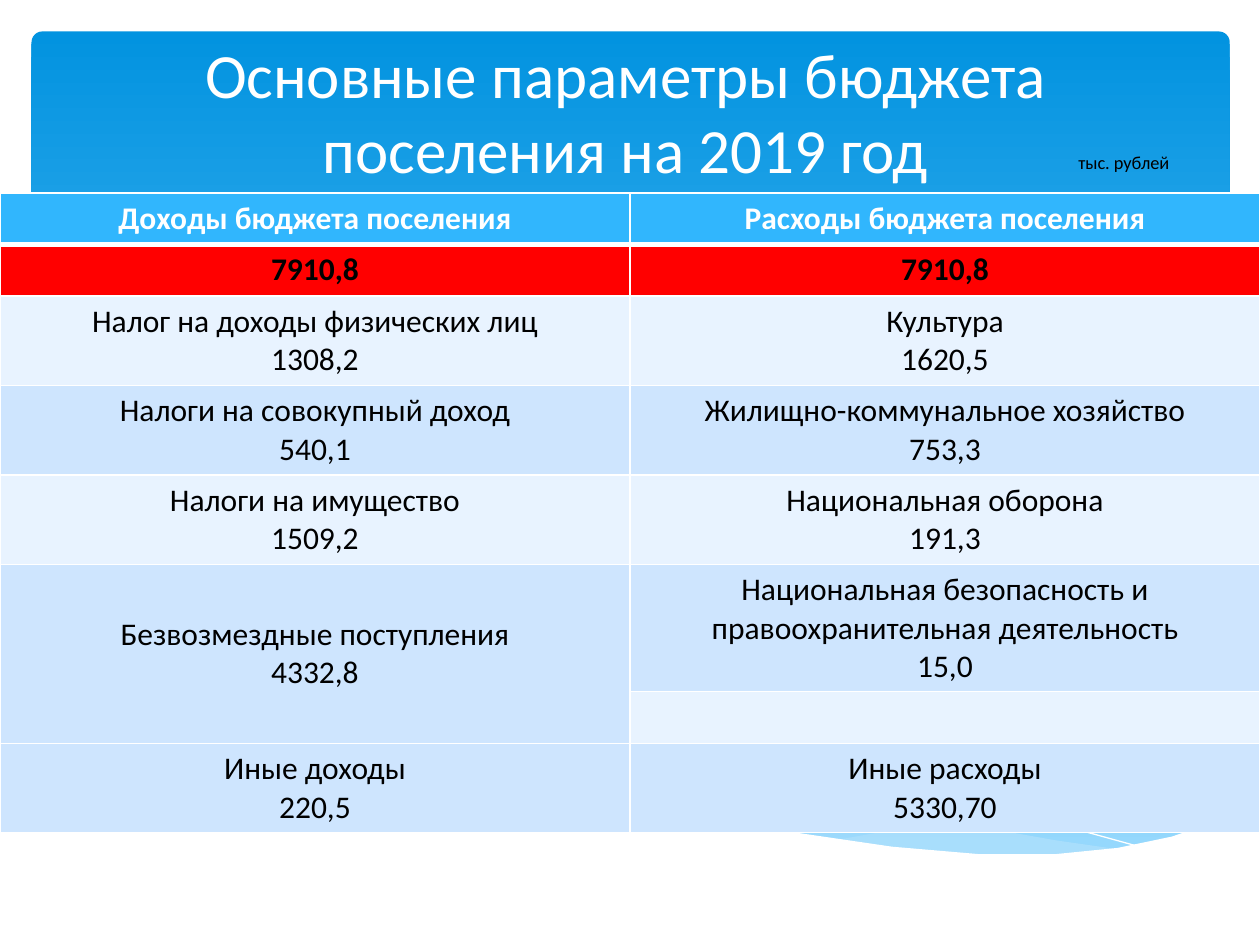
from dataclasses import dataclass

from lxml.etree import SubElement
from pptx import Presentation
from pptx.dml.color import RGBColor
from pptx.enum.shapes import MSO_SHAPE
from pptx.enum.text import MSO_ANCHOR, PP_ALIGN
from pptx.oxml.ns import qn
from pptx.util import Inches, Pt


@dataclass(frozen=True)
class Theme:
    font: str = "Calibri"
    title_size: float = 36
    table_size: float = 18
    unit_size: float = 10.5
    white: str = "FFFFFF"
    black: str = "000000"
    panel_top: str = "0293E0"
    panel_bottom: str = "83D3FE"
    wave: str = "C6E7FC"
    header: str = "31B6FD"
    total: str = "FF0000"
    band_light: str = "E8F3FF"
    band_dark: str = "CEE5FE"


THEME = Theme()

RIGHT_WAVE = [
    (9.53, 0.15), (8.99, 0.25), (8.39, 0.39), (7.57, 0.58), (6.84, 0.73), (6.39, 0.81),
    (6.83, 0.87), (7.35, 0.92), (7.92, 0.94), (8.41, 0.91), (8.84, 0.85), (9.21, 0.75),
    (9.54, 0.63),
]
LONG_WAVE = [
    (8.71, 0.89), (8.15, 0.81), (7.53, 0.7), (6.84, 0.56), (6.07, 0.38), (5.47, 0.24),
    (4.92, 0.14), (4.42, 0.07), (3.97, 0.03), (3.39, 0.01), (2.91, 0.04), (2.64, 0.07),
    (3.2, 0.15), (3.82, 0.27), (4.27, 0.38), (5.07, 0.56), (5.79, 0.71), (6.43, 0.82),
    (7, 0.9), (7.51, 0.93), (8.06, 0.94), (8.45, 0.92),
]
LONG_LINE = [
    (2.87, 0.11), (3.3, 0.05), (3.94, 0.03), (4.66, 0.06), (5.34, 0.12), (6.14, 0.24),
    (7.05, 0.42), (8.09, 0.66), (8.85, 0.87),
]
RIGHT_LINE = [
    (5.91, 0.73), (6.73, 0.51), (7.54, 0.32), (8.44, 0.14), (9.02, 0.06), (9.53, 0.01),
]
WHITE_BASE = [
    (9.54, 0.62), (9.07, 0.78), (8.64, 0.87), (8.14, 0.92), (7.55, 0.92), (6.85, 0.86),
    (6.03, 0.74), (5.06, 0.55), (4.24, 0.36), (3.42, 0.18), (2.69, 0.06), (2.07, 0.01),
    (1.54, 0), (0.96, 0.03), (0.44, 0.13), (0, 0.29), (0, 1.45), (9.54, 1.45),
]

# Row height, fill, income text, expense text
BUDGET_ROWS = [
    (0.41, THEME.header, "Доходы бюджета поселения", "Расходы бюджета поселения"),
    (0.41, THEME.total, "7910,8", "7910,8"),
    (0.71, THEME.band_light, "Налог на доходы физических лиц\n1308,2", "Культура\n1620,5"),
    (0.71, THEME.band_dark, "Налоги на совокупный доход\n540,1",
     "Жилищно-коммунальное хозяйство\n753,3"),
    (0.71, THEME.band_light, "Налоги на имущество\n1509,2", "Национальная оборона\n191,3"),
    (1.01, THEME.band_dark, "Безвозмездные поступления\n4332,8",
     "Национальная безопасность и правоохранительная деятельность\n15,0"),
    (0.41, THEME.band_light, "", ""),
    (0.71, THEME.band_dark, "Иные доходы\n220,5", "Иные расходы\n5330,70"),
]
GRANTS_ROW = 5


def write_text(frame, text, size, color=THEME.black, bold=False, align=PP_ALIGN.LEFT):
    """Write each line of the text as a formatted paragraph."""
    frame.text = text
    frame.word_wrap = True
    for paragraph in frame.paragraphs:
        paragraph.alignment = align
        font = paragraph.font
        for run in paragraph.runs:
            font = run.font
        font.name, font.size, font.bold = THEME.font, Pt(size), bold
        font.color.rgb = RGBColor.from_string(color)


def add_text(slide, box, text, anchor=MSO_ANCHOR.TOP, **text_format):
    frame = slide.shapes.add_textbox(*map(Inches, box)).text_frame
    write_text(frame, text, **text_format)
    frame.vertical_anchor = anchor


def add_curve(slide, box, points, fill=None, opacity=100):
    """Draw a filled outline, or an open white hairline when there is no fill."""
    left, top = box[:2]
    corners = [(Inches(left + x), Inches(top + y)) for x, y in points]
    builder = slide.shapes.build_freeform(*corners[0])
    builder.add_line_segments(corners[1:], close=fill is not None)
    shape = builder.convert_to_shape()
    shape.shadow.inherit = False
    if fill is None:
        shape.fill.background()
        shape.line.color.rgb = RGBColor.from_string(THEME.white)
        shape.line.width = Pt(0)
        return
    shape.line.fill.background()
    shape.fill.solid()
    shape.fill.fore_color.rgb = RGBColor.from_string(fill)
    if opacity < 100:
        color = shape.fill._xPr.find(qn("a:solidFill"))[0]
        SubElement(color, qn("a:alpha"), val=str(opacity * 1000))


def add_panel(slide, box):
    panel = slide.shapes.add_shape(MSO_SHAPE.ROUNDED_RECTANGLE, *map(Inches, box))
    panel.adjustments[0] = 0.013
    panel.shadow.inherit = False
    panel.line.fill.background()
    panel.fill.gradient()
    panel.fill.gradient_angle = 270
    colors = (THEME.panel_top, THEME.panel_bottom)
    for stop, color, position in zip(panel.fill.gradient_stops, colors, (0, 1)):
        stop.color.rgb = RGBColor.from_string(color)
        stop.position = position


def add_waves(slide, box):
    add_curve(slide, box, RIGHT_WAVE, THEME.wave, opacity=29)
    add_curve(slide, box, LONG_WAVE, THEME.wave, opacity=40)
    add_curve(slide, box, LONG_LINE)
    add_curve(slide, box, RIGHT_LINE)
    add_curve(slide, box, WHITE_BASE, THEME.white)


def set_borders(cell, top=1, bottom=1):
    properties = cell._tc.get_or_add_tcPr()
    widths = {"a:lnL": 1, "a:lnR": 1, "a:lnT": top, "a:lnB": bottom}
    for position, (tag, width) in enumerate(widths.items()):
        line = properties.makeelement(qn(tag), {"w": str(Pt(width))})
        properties.insert(position, line)
        SubElement(SubElement(line, qn("a:solidFill")), qn("a:srgbClr"), val=THEME.white)


def add_budget_table(slide, box):
    table = slide.shapes.add_table(len(BUDGET_ROWS), 2, *map(Inches, box)).table
    table.horz_banding = False
    for index, (height, fill, *texts) in enumerate(BUDGET_ROWS):
        table.rows[index].height = Inches(height)
        for column, text in enumerate(texts):
            cell = table.cell(index, column)
            cell.fill.solid()
            cell.fill.fore_color.rgb = RGBColor.from_string(fill)
            set_borders(cell, top=3 if index == 1 else 1, bottom=3 if index == 0 else 1)
            write_text(cell.text_frame, text, THEME.table_size, bold=index < 2,
                       color=THEME.white if index == 0 else THEME.black,
                       align=PP_ALIGN.CENTER)
    grants = table.cell(GRANTS_ROW, 0)
    grants.merge(table.cell(GRANTS_ROW + 1, 0))
    grants.vertical_anchor = MSO_ANCHOR.MIDDLE


def main():
    presentation = Presentation()
    presentation.slide_width, presentation.slide_height = Inches(10), Inches(7.5)
    slide = presentation.slides.add_slide(presentation.slide_layouts[6])
    add_panel(slide, (0.25, 0.25, 9.51, 6.6))
    add_waves(slide, (0.23, 5.86, 9.54, 1.45))
    add_text(slide, (0.67, 0.13, 8.59, 1.4), "Основные параметры бюджета поселения на 2019 год",
             anchor=MSO_ANCHOR.BOTTOM, size=THEME.title_size, color=THEME.white,
             align=PP_ALIGN.CENTER)
    add_budget_table(slide, (0, 1.53, 10, 5.08))
    add_text(slide, (8.46, 1.15, 1.42, 0.28), "тыс. рублей", size=THEME.unit_size)
    presentation.save("out.pptx")


if __name__ == "__main__":
    main()
